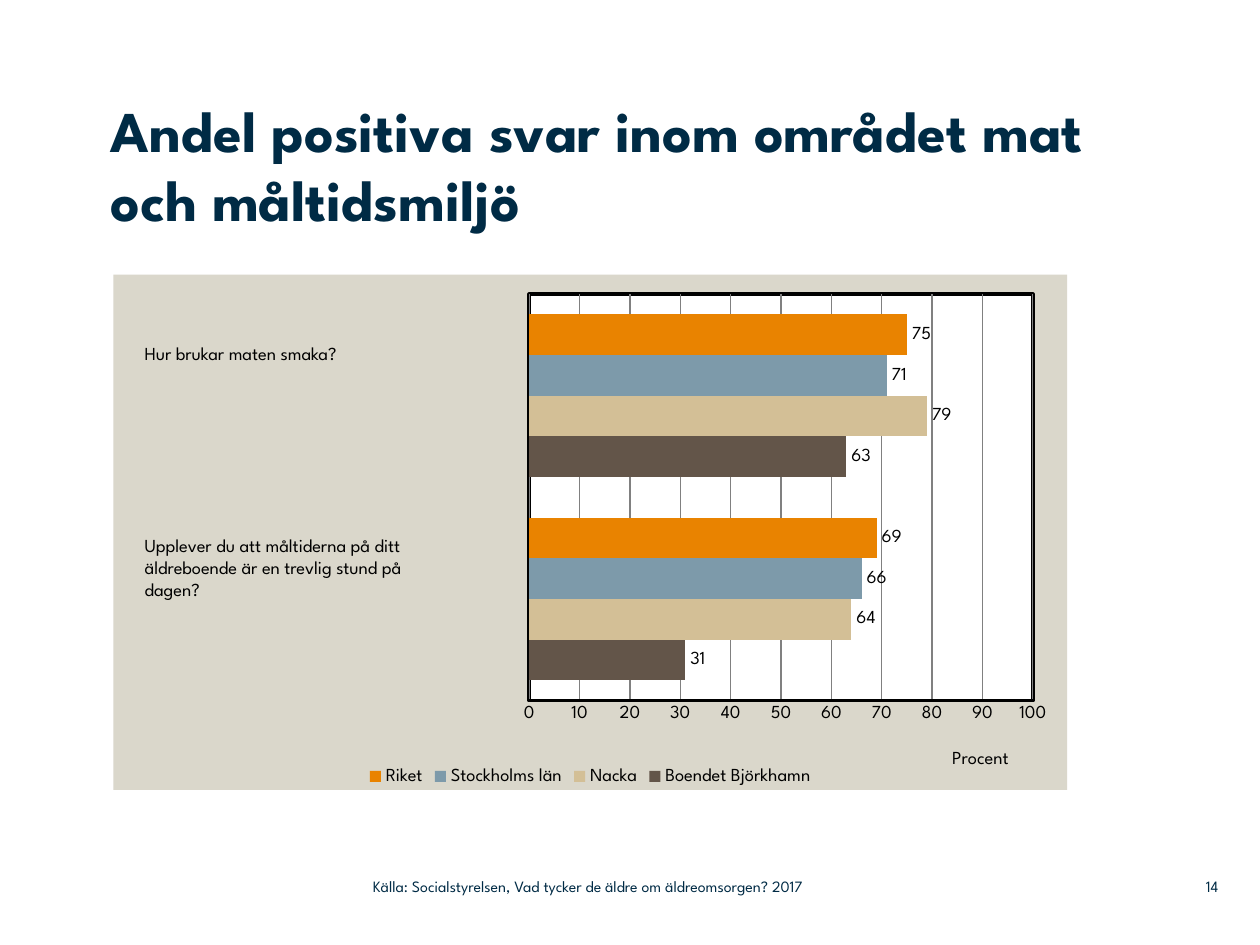
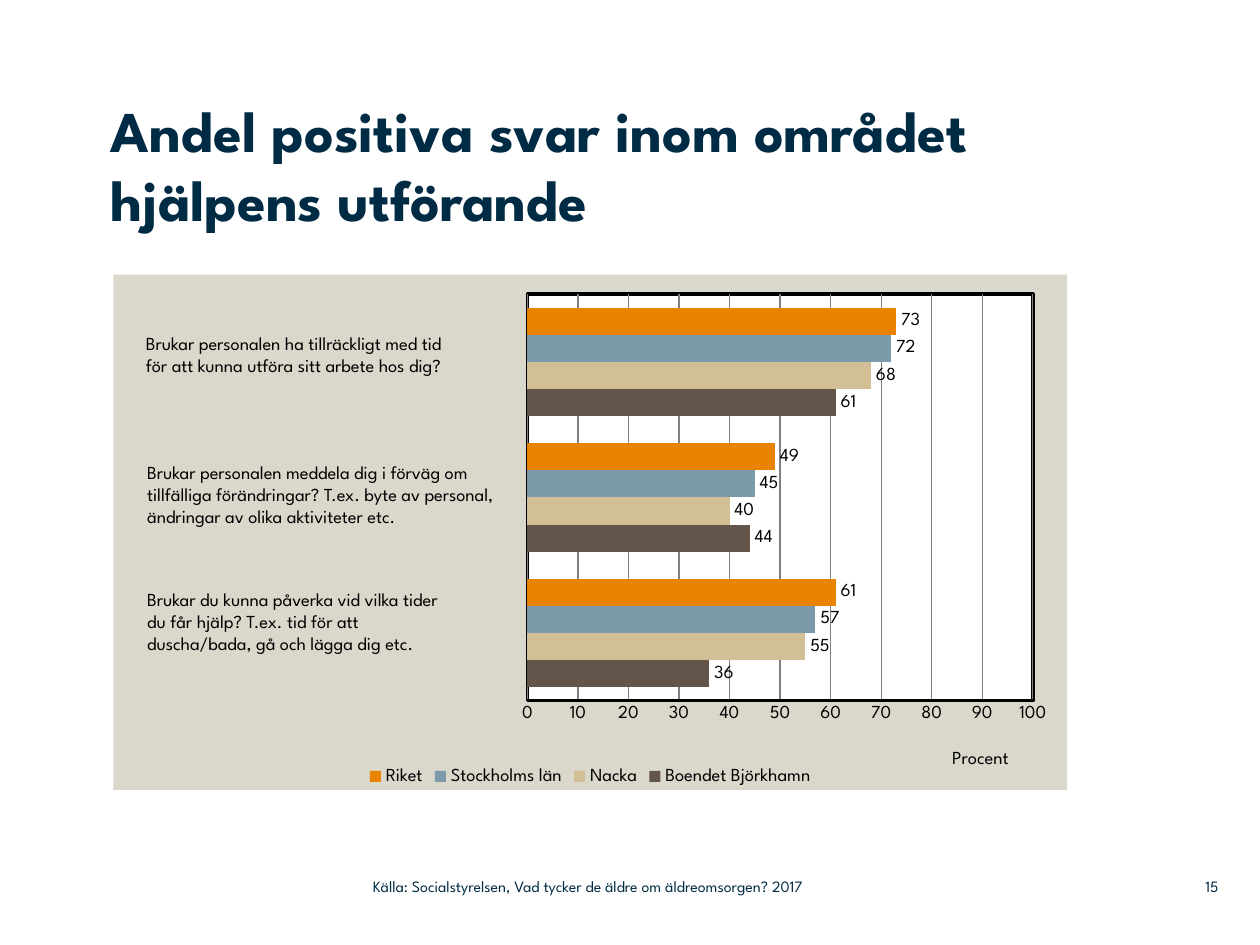
from dataclasses import dataclass

import pptx
import pptx.chart.chart
import pptx.chart.data
import pptx.dml.color
import pptx.enum.chart
import pptx.enum.text
import pptx.oxml
import pptx.oxml.ns
import pptx.slide
import pptx.util
from pptx.dml.color import RGBColor
from pptx.util import Inches

# Shared style
FONT = "League Spartan"
NAVY = RGBColor(0x00, 0x2B, 0x45)
BLACK = RGBColor(0x00, 0x00, 0x00)
GRID_GREY = RGBColor(0x80, 0x80, 0x80)
PANEL = "DAD7CB"
PLOT_FILL = "FFFFFF"
TITLE_SIZE, BODY_SIZE, FOOTER_SIZE = 33, 10.5, 9
SOURCE = "Källa: Socialstyrelsen, Vad tycker de äldre om äldreomsorgen? 2017"
CHART_BOX = (0.9, 2.18, 7.57, 4.09)

# Series from the lowest bar in each group to the highest
SERIES_COLORS = {
    "Boendet Björkhamn": RGBColor(0x63, 0x55, 0x49),
    "Nacka": RGBColor(0xD3, 0xBF, 0x96),
    "Stockholms län": RGBColor(0x7D, 0x9A, 0xAA),
    "Riket": RGBColor(0xE9, 0x83, 0x00),
}


@dataclass(frozen=True)
class Question:
    left: float
    top: float
    width: float
    height: float
    lines: tuple[str, ...]


@dataclass(frozen=True)
class SurveySlide:
    number: int
    title: str
    title_width: float
    plot_left: float
    plot_width: float
    values: tuple[tuple[int, ...], ...]  # one row per series
    questions: tuple[Question, ...]


SURVEY_SLIDES = (
    SurveySlide(
        14, "Andel positiva svar inom området mat och måltidsmiljö", 8.42,
        0.436, 0.528,
        ((31, 63), (64, 79), (66, 71), (69, 75)),
        (
            Question(1.05, 2.67, 2.97, 0.28, ("Hur brukar maten smaka?",)),
            Question(1.05, 4.19, 2.93, 0.63, (
                "Upplever du att måltiderna på ditt äldreboende är en trevlig stund på",
                "dagen?")),
        ),
    ),
    SurveySlide(
        15, "Andel positiva svar inom området hjälpens utförande", 7.6,
        0.434, 0.53,
        ((36, 44, 61), (55, 40, 68), (57, 45, 72), (61, 49, 73)),
        (
            Question(1.06, 2.59, 2.99, 0.45, (
                "Brukar personalen ha tillräckligt med tid",
                "för att kunna utföra sitt arbete hos dig?")),
            Question(1.07, 3.61, 2.97, 0.81, (
                "Brukar personalen meddela dig i förväg om tillfälliga förändringar? "
                "T.ex. byte av personal, ändringar av olika aktiviteter etc.",)),
            Question(1.07, 4.62, 2.97, 0.63, (
                "Brukar du kunna påverka vid vilka tider",
                "du får hjälp? T.ex. tid för att",
                "duscha/bada, gå och lägga dig etc.")),
        ),
    ),
)


def style_font(font, size: float, color: RGBColor, bold: bool = False) -> None:
    font.name = FONT
    font.size = pptx.util.Pt(size)
    font.bold = bold
    font.color.rgb = color


def add_text(slide: pptx.slide.Slide, box: tuple[float, ...], lines: tuple[str, ...],
             size: float, color: RGBColor, bold: bool = False, inset: bool = False,
             anchor=pptx.enum.text.MSO_ANCHOR.TOP,
             alignment=pptx.enum.text.PP_ALIGN.LEFT) -> None:
    shape = slide.shapes.add_textbox(*map(Inches, box))
    frame = shape.text_frame
    frame.word_wrap = True
    frame.vertical_anchor = anchor
    frame.margin_left = frame.margin_right = Inches(0.1 if inset else 0)
    frame.margin_top = frame.margin_bottom = Inches(0.05 if inset else 0)
    for index, line in enumerate(lines):
        paragraph = frame.add_paragraph() if index else frame.paragraphs[0]
        paragraph.alignment = alignment
        run = paragraph.add_run()
        run.text = line
        style_font(run.font, size, color, bold)


def chart_xml(tag: str, content: str):
    """Parse one chart element, with the drawing namespaces declared."""
    namespaces = pptx.oxml.ns.nsdecls("c", "a")
    return pptx.oxml.parse_xml(f"<c:{tag} {namespaces}>{content}</c:{tag}>")


def set_layout(parent, index: int, **settings) -> None:
    """Place a chart part by fractions of the chart area."""
    for layout in parent.findall(pptx.oxml.ns.qn("c:layout")):
        parent.remove(layout)
    content = "".join(f'<c:{key} val="{value}"/>' for key, value in settings.items())
    parent.insert(index, chart_xml("layout", f"<c:manualLayout>{content}</c:manualLayout>"))


def area_format(fill: str, line: str):
    return chart_xml("spPr", f'<a:solidFill><a:srgbClr val="{fill}"/></a:solidFill>{line}')


def style_areas(chart: pptx.chart.chart.Chart, survey: SurveySlide) -> None:
    chart_space = chart.element
    chart_element = chart_space.find(pptx.oxml.ns.qn("c:chart"))
    chart_element.addnext(area_format(PANEL, "<a:ln><a:noFill/></a:ln>"))
    plot_area = chart_element.find(pptx.oxml.ns.qn("c:plotArea"))
    set_layout(plot_area, 0, layoutTarget="inner", xMode="edge", yMode="edge",
               x=survey.plot_left, y=0.038, w=survey.plot_width, h=0.789)
    plot_area.append(area_format(
        PLOT_FILL,
        f'<a:ln w="25400"><a:solidFill><a:srgbClr val="{BLACK}"/></a:solidFill></a:ln>'))


def style_value_axis(axis) -> None:
    axis.minimum_scale, axis.maximum_scale, axis.major_unit = 0, 100, 10
    axis.major_tick_mark = pptx.enum.chart.XL_TICK_MARK.NONE
    axis.minor_tick_mark = pptx.enum.chart.XL_TICK_MARK.NONE
    axis.format.line.color.rgb = BLACK
    axis.format.line.width = pptx.util.Pt(2)
    axis.has_major_gridlines = True
    axis.major_gridlines.format.line.color.rgb = GRID_GREY
    axis.major_gridlines.format.line.width = pptx.util.Pt(0.75)
    style_font(axis.tick_labels.font, BODY_SIZE, BLACK)
    run = axis.axis_title.text_frame.paragraphs[0].add_run()
    run.text = "Procent"
    style_font(run.font, BODY_SIZE, BLACK)
    set_layout(axis.axis_title._element, 1, xMode="edge", yMode="edge", x=0.876, y=0.914)


def add_survey_chart(slide: pptx.slide.Slide, survey: SurveySlide) -> None:
    data = pptx.chart.data.CategoryChartData()
    data.categories = [str(i + 1) for i in range(len(survey.questions))]
    for name, values in zip(SERIES_COLORS, survey.values):
        data.add_series(name, values)
    chart = slide.shapes.add_chart(
        pptx.enum.chart.XL_CHART_TYPE.BAR_CLUSTERED, *map(Inches, CHART_BOX), data).chart
    style_font(chart.font, BODY_SIZE, BLACK)
    chart.has_title = False
    chart.category_axis.visible = False
    style_value_axis(chart.value_axis)

    # Bars and their labels
    plot = chart.plots[0]
    plot.gap_width = 100
    plot.vary_by_categories = False
    for series, color in zip(plot.series, SERIES_COLORS.values()):
        series.format.fill.solid()
        series.format.fill.fore_color.rgb = color
        labels = series.data_labels
        labels.show_value = True
        labels.position = pptx.enum.chart.XL_LABEL_POSITION.OUTSIDE_END
        style_font(labels.font, BODY_SIZE, BLACK)

    chart.has_legend = True
    chart.legend.position = pptx.enum.chart.XL_LEGEND_POSITION.BOTTOM
    chart.legend.include_in_layout = False
    style_font(chart.legend.font, BODY_SIZE, BLACK)
    style_areas(chart, survey)


def add_footer(slide: pptx.slide.Slide, number: int) -> None:
    middle = pptx.enum.text.MSO_ANCHOR.MIDDLE
    add_text(slide, (9.2, 6.89, 0.47, 0.29), (str(number),), FOOTER_SIZE, NAVY,
             anchor=middle, alignment=pptx.enum.text.PP_ALIGN.RIGHT)
    add_text(slide, (2.96, 6.89, 4.43, 0.29), (SOURCE,), FOOTER_SIZE, NAVY, anchor=middle)


def main() -> None:
    presentation = pptx.Presentation()
    presentation.slide_width = Inches(10)
    presentation.slide_height = Inches(7.5)
    for survey in SURVEY_SLIDES:
        slide = presentation.slides.add_slide(presentation.slide_layouts[6])
        add_survey_chart(slide, survey)
        add_text(slide, (0.88, 0.75, survey.title_width, 1.42), (survey.title,),
                 TITLE_SIZE, NAVY, bold=True)
        for question in survey.questions:
            box = (question.left, question.top, question.width, question.height)
            add_text(slide, box, question.lines, BODY_SIZE, BLACK, inset=True)
        add_footer(slide, survey.number)
    presentation.save("out.pptx")


if __name__ == "__main__":
    main()
